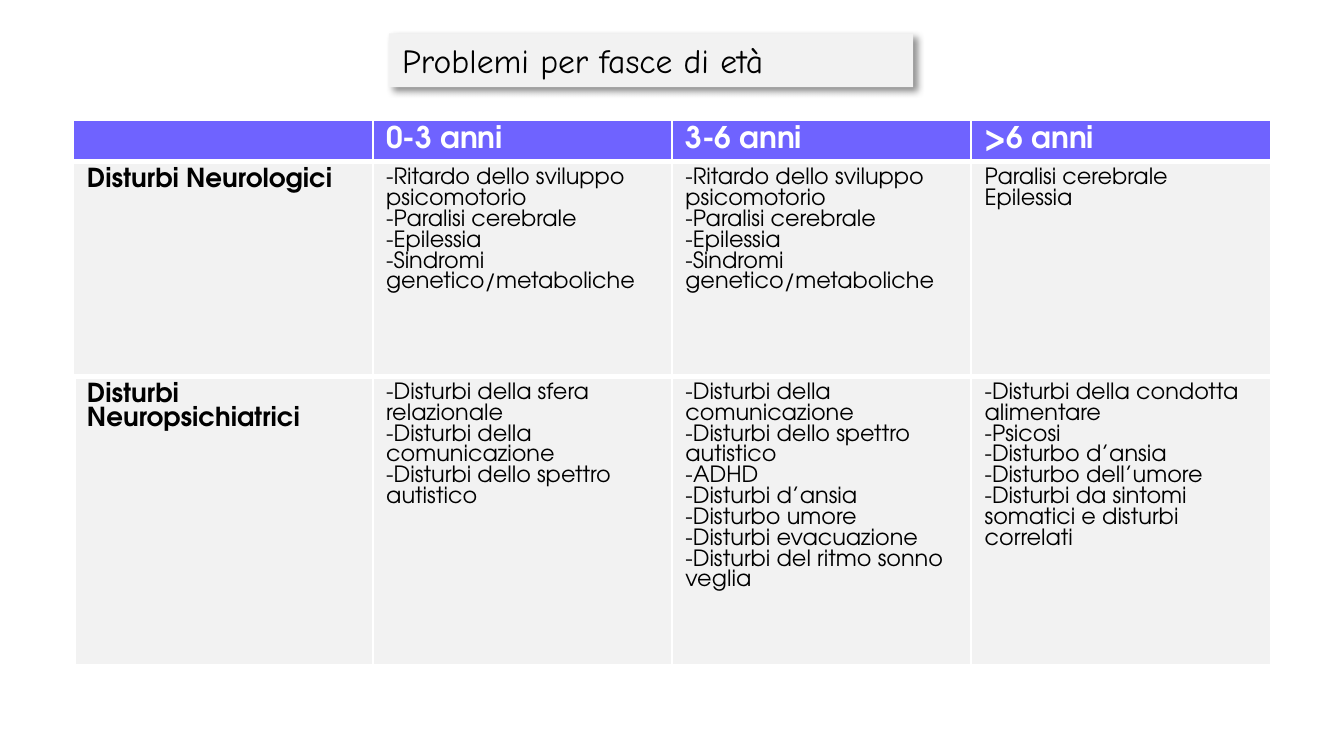
from lxml.etree import SubElement
from pptx import Presentation
from pptx.dml.color import RGBColor
from pptx.enum.shapes import MSO_SHAPE
from pptx.enum.text import MSO_ANCHOR, MSO_AUTO_SIZE, PP_ALIGN
from pptx.oxml.ns import qn
from pptx.util import Cm, Pt

TABLE_FONT = "TeX Gyre Adventor"
TITLE_FONT = "Comic Neue"
WHITE, BLACK, GREY, VIOLET = "FFFFFF", "000000", "F2F2F2", "6F63FF"
LINE_PITCH = 0.93
ROW_HEIGHTS = (0.74, 4.06, 5.46)
LEFT_BORDERS = (1, 0, 3)
EARLY_NEUROLOGICAL = [
    "-Ritardo dello sviluppo psicomotorio",
    "-Paralisi cerebrale",
    "-Epilessia",
    "-Sindromi genetico/metaboliche",
]
ROWS = [
    [[], ["0-3 anni"], ["3-6 anni"], [">6 anni"]],
    [
        ["Disturbi Neurologici"],
        EARLY_NEUROLOGICAL,
        EARLY_NEUROLOGICAL,
        ["Paralisi cerebrale", "Epilessia"],
    ],
    [
        ["Disturbi Neuropsichiatrici"],
        [
            "-Disturbi della sfera relazionale",
            "-Disturbi della comunicazione",
            "-Disturbi dello spettro autistico",
        ],
        [
            "-Disturbi della comunicazione",
            "-Disturbi dello spettro autistico",
            "-ADHD",
            "-Disturbi d’ansia",
            "-Disturbo umore",
            "-Disturbi evacuazione",
            "-Disturbi del ritmo sonno veglia",
        ],
        [
            "-Disturbi della condotta alimentare",
            "-Psicosi",
            "-Disturbo d’ansia",
            "-Disturbo dell’umore",
            "-Disturbi da sintomi somatici e disturbi correlati",
        ],
    ],
]


def rgb(color):
    """Turn a hex string into a colour."""
    return RGBColor.from_string(color)


def paint(target, color):
    """Fill a shape or cell with one colour."""
    target.fill.solid()
    target.fill.fore_color.rgb = rgb(color)


def style_text(text_frame, font_name, size, color, bold=False):
    """Format every run of a text frame and align it left."""
    for paragraph in text_frame.paragraphs:
        paragraph.alignment = PP_ALIGN.LEFT
        for run in paragraph.runs:
            run.font.name = font_name
            run.font.size = Pt(size)
            run.font.bold = bold
            run.font.color.rgb = rgb(color)


def add_shadow(shape, color, alpha, blur, distance, angle):
    """Give a shape an outer shadow."""
    effects = SubElement(shape._element.spPr, qn("a:effectLst"))
    shadow = SubElement(
        effects, qn("a:outerShdw"), blurRad=str(Pt(blur)), dist=str(Pt(distance)),
        dir=str(angle * 60000), algn="tl", rotWithShape="0",
    )
    shade = SubElement(shadow, qn("a:srgbClr"), val=color)
    SubElement(shade, qn("a:alpha"), val=str(alpha * 1000))


def set_borders(cell, color, widths):
    """Draw the cell borders; a zero width means no line."""
    properties = cell._tc.get_or_add_tcPr()
    for side in "LRTB":
        width = widths[side]
        line = SubElement(properties, qn(f"a:ln{side}"), w=str(Pt(width)))
        if width:
            fill = SubElement(line, qn("a:solidFill"))
            SubElement(fill, qn("a:srgbClr"), val=color)
        else:
            SubElement(line, qn("a:noFill"))


def set_empty_size(paragraph, font_name, size):
    """Set the font that gives an empty paragraph its height."""
    ending = SubElement(paragraph._p, qn("a:endParaRPr"), sz=str(size * 100))
    SubElement(ending, qn("a:latin"), typeface=font_name)


def fill_cell(cell, lines, row, column):
    """Write and style one cell according to its place in the table."""
    is_header, is_label = row == 0, column == 0
    size = 16 if is_header else 14 if is_label else 12
    text_frame = cell.text_frame
    text_frame.text = "\n".join(lines)
    style_text(text_frame, TABLE_FONT, size,
               WHITE if is_header else BLACK, is_header or is_label)
    for paragraph in text_frame.paragraphs:
        paragraph.line_spacing = Pt(size * LINE_PITCH)
    if not lines:
        set_empty_size(text_frame.paragraphs[0], TABLE_FONT, 12)
    set_borders(cell, WHITE, {
        "L": LEFT_BORDERS[row] if is_label else 1,
        "R": 1,
        "T": 1 if is_header else 3,
        "B": 1 if row == len(ROWS) - 1 else 3,
    })
    paint(cell, VIOLET if is_header else GREY)


def add_problem_table(slide):
    """Add the table of problems by age group."""
    frame = slide.shapes.add_table(
        len(ROWS), len(ROWS[0]), Cm(1.39), Cm(2.27), Cm(22.62), Cm(sum(ROW_HEIGHTS)))
    table = frame.table
    table.first_row = table.horz_banding = False
    for row, (height, contents) in enumerate(zip(ROW_HEIGHTS, ROWS)):
        table.rows[row].height = Cm(height)
        for column, lines in enumerate(contents):
            fill_cell(table.cell(row, column), lines, row, column)


def add_title(slide, text):
    """Add the shadowed title box."""
    shape = slide.shapes.add_shape(
        MSO_SHAPE.RECTANGLE, Cm(7.35), Cm(0.63), Cm(9.91), Cm(1.02))
    paint(shape, GREY)
    shape.line.fill.background()
    add_shadow(shape, BLACK, alpha=43, blur=4, distance=3, angle=45)
    text_frame = shape.text_frame
    text_frame.text = text
    text_frame.word_wrap = True
    text_frame.auto_size = MSO_AUTO_SIZE.NONE
    text_frame.vertical_anchor = MSO_ANCHOR.TOP
    style_text(text_frame, TITLE_FONT, 18, BLACK)


def main():
    """Build and save the presentation."""
    presentation = Presentation()
    presentation.slide_width, presentation.slide_height = Cm(25.4), Cm(14.29)
    slide = presentation.slides.add_slide(presentation.slide_layouts[6])
    add_problem_table(slide)
    add_title(slide, "Problemi per fasce di età")
    presentation.save("out.pptx")


if __name__ == "__main__":
    main()
